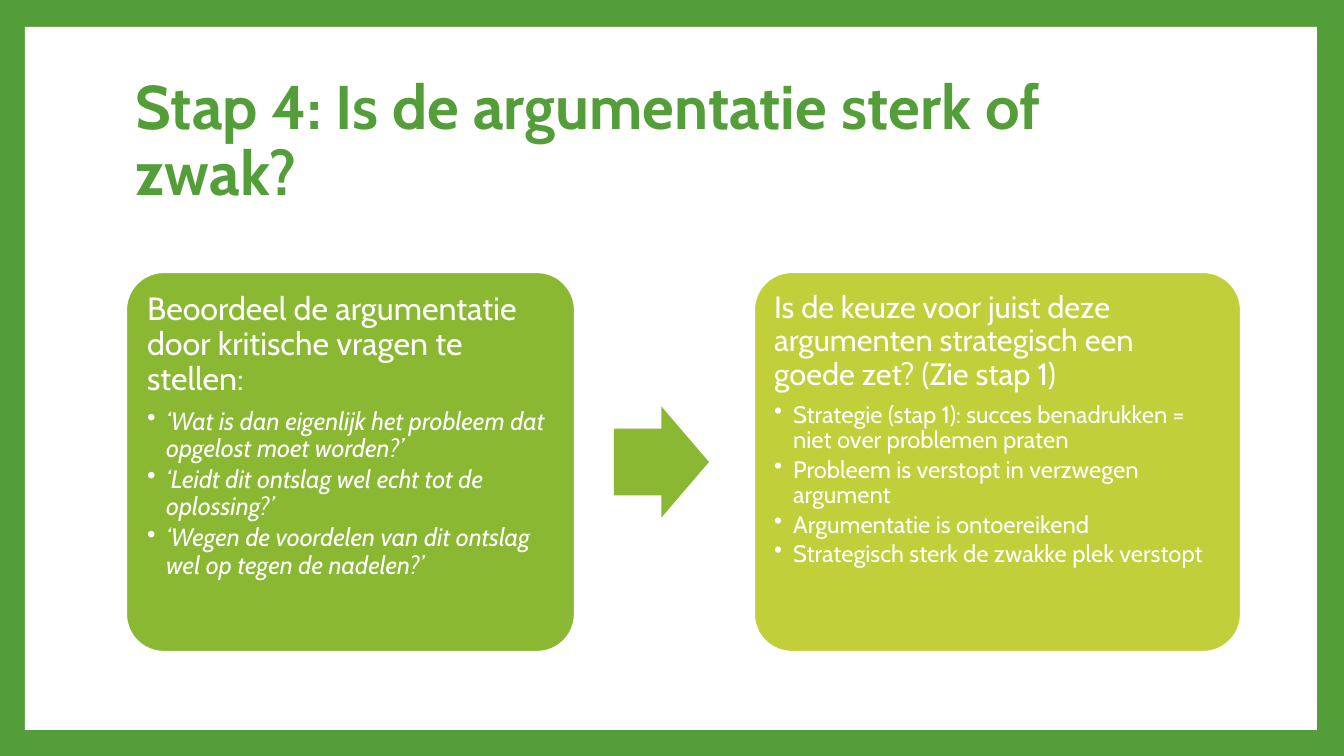
from lxml import etree
from pptx import Presentation
from pptx.dml.color import RGBColor
from pptx.enum import shapes, text
from pptx.oxml import ns
from pptx import util as u

GREEN = RGBColor(0x54, 0x9E, 0x39)
LEAF = RGBColor(0x8A, 0xB8, 0x33)
LIME = RGBColor(0xC0, 0xCF, 0x3A)
WHITE = RGBColor(0xFF, 0xFF, 0xFF)
FONT = "Cabin"

# Content
TITLE = "Stap 4: Is de argumentatie sterk of zwak?"
PANELS = [
    dict(left=126, width=449, inset=10, fill=LEAF, sizes=(23, 18), italic=True,
         heading="Beoordeel de argumentatie door kritische vragen te stellen:",
         points=["‘Wat is dan eigenlijk het probleem dat opgelost moet worden?’",
                 "‘Leidt dit ontslag wel echt tot de oplossing?’",
                 "‘Wegen de voordelen van dit ontslag wel op tegen de nadelen?’"]),
    dict(left=754, width=487, inset=9, fill=LIME, sizes=(22, 17), italic=False,
         heading="Is de keuze voor juist deze argumenten strategisch een goede zet? (Zie stap 1)",
         points=["Strategie (stap 1): succes benadrukken = niet over problemen praten",
                 "Probleem is verstopt in verzwegen argument",
                 "Argumentatie is ontoereikend",
                 "Strategisch sterk de zwakke plek verstopt"]),
]

# Layout in px
SLIDE_W, SLIDE_H = 1344, 756
PANEL_TOP, PANEL_H = 272, 380
ARROW_W, ARROW_H = 95, 111
BULLET_INDENT = 19


def px(n):
    return u.Emu(round(n * 914400 / 100.8))


def add_block(slide, kind, box, fill):
    block = slide.shapes.add_shape(kind, *map(px, box))
    block.shadow.inherit = False
    block.fill.solid()
    block.fill.fore_color.rgb = fill
    block.line.fill.background()
    return block


def write(paragraph, words, size, color, bold=False, italic=False):
    paragraph.alignment = text.PP_ALIGN.LEFT
    paragraph.line_spacing = 0.9
    run = paragraph.add_run()
    run.text = words
    font = run.font
    font.name, font.size, font.bold, font.italic = FONT, u.Pt(size), bold, italic
    font.color.rgb = color


def add_bullet(paragraph):
    props = paragraph._p.get_or_add_pPr()
    props.set("marL", str(px(BULLET_INDENT)))
    props.set("indent", str(-px(BULLET_INDENT)))
    etree.SubElement(props, ns.qn("a:buChar")).set("char", "•")


def add_panel(slide, panel):
    card = add_block(slide, shapes.MSO_SHAPE.ROUNDED_RECTANGLE,
                     (panel["left"], PANEL_TOP, panel["width"], PANEL_H), panel["fill"])
    card.adjustments[0] = 0.1
    card.line.color.rgb = WHITE
    card.line.width = u.Pt(1.5)
    frame = card.text_frame
    frame.word_wrap = True
    frame.vertical_anchor = text.MSO_ANCHOR.TOP
    frame.margin_left = frame.margin_right = px(panel["inset"])
    frame.margin_top = frame.margin_bottom = px(panel["inset"])

    heading_size, point_size = panel["sizes"]
    heading = frame.paragraphs[0]
    write(heading, panel["heading"], heading_size, WHITE)
    heading.space_after = u.Pt(round(heading_size * 0.35, 1))
    for words in panel["points"]:
        point = frame.add_paragraph()
        write(point, words, point_size, WHITE, italic=panel["italic"])
        point.space_after = u.Pt(round(point_size * 0.15, 1))
        point.level = 1
        add_bullet(point)


def main():
    deck = Presentation()
    deck.slide_width, deck.slide_height = px(SLIDE_W), px(SLIDE_H)
    slide = deck.slides.add_slide(deck.slide_layouts[6])

    # Green border around a white page
    slide.background.fill.solid()
    slide.background.fill.fore_color.rgb = GREEN
    add_block(slide, shapes.MSO_SHAPE.RECTANGLE, (25, 27, 1292, 703), WHITE)

    # Title
    title = slide.shapes.add_textbox(*map(px, (126, 68, 1089, 149))).text_frame
    title.word_wrap = True
    title.vertical_anchor = text.MSO_ANCHOR.MIDDLE
    write(title.paragraphs[0], TITLE, 44, GREEN, bold=True)

    # Panels
    for panel in PANELS:
        add_panel(slide, panel)

    # Arrow, centred between the panels
    first, second = PANELS
    gap_middle = (first["left"] + first["width"] + second["left"]) / 2
    arrow_left = gap_middle - ARROW_W / 2 - 3
    arrow_top = PANEL_TOP + (PANEL_H - ARROW_H) / 2
    arrow = add_block(slide, shapes.MSO_SHAPE.RIGHT_ARROW,
                      (arrow_left, arrow_top, ARROW_W, ARROW_H), LEAF)
    arrow.adjustments[0] = 0.6
    arrow.adjustments[1] = 0.5

    deck.save("out.pptx")


if __name__ == "__main__":
    main()
